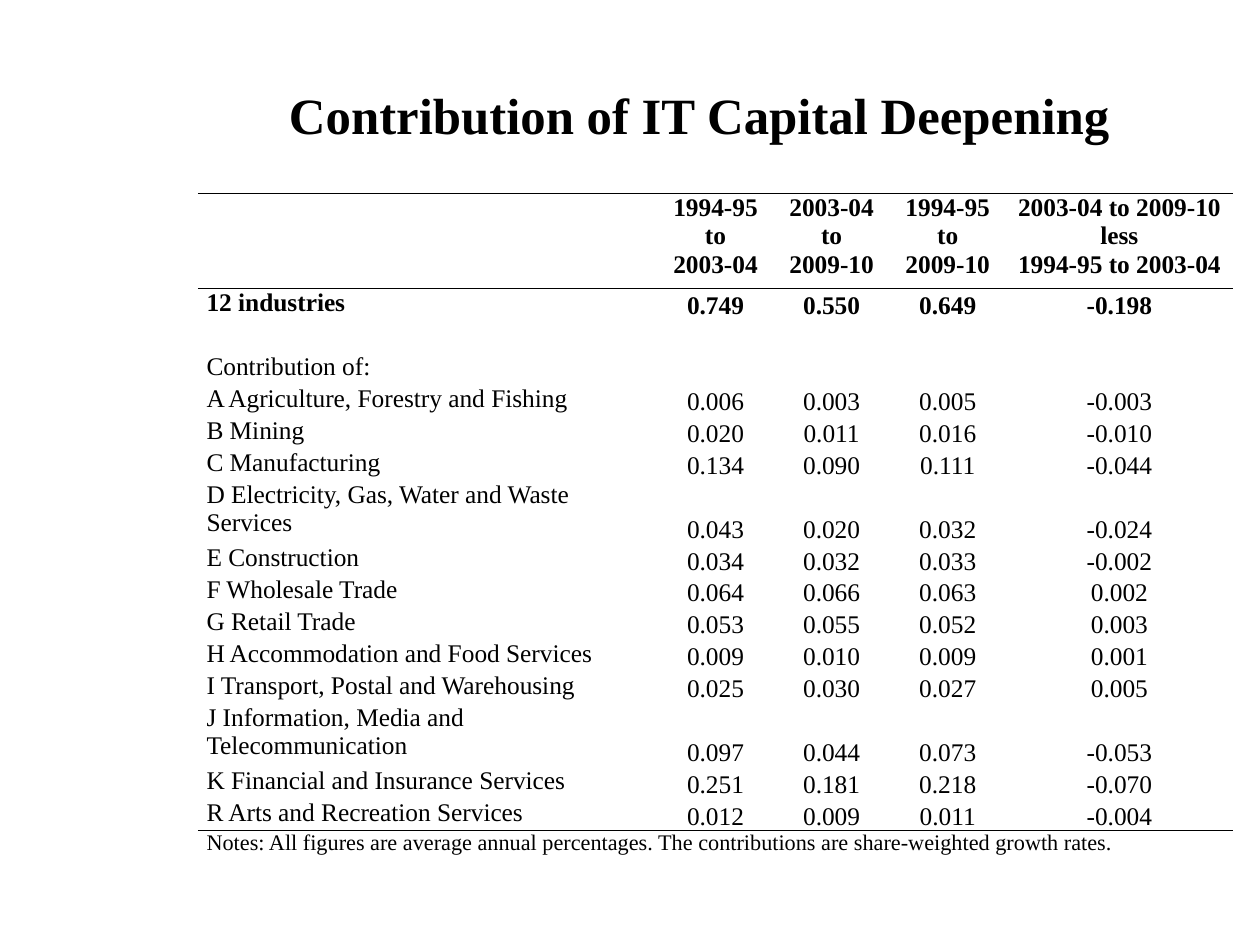
from dataclasses import dataclass

import lxml.etree
import pptx
import pptx.dml.color
import pptx.enum.text
import pptx.oxml.ns
import pptx.table
import pptx.util

Cm = pptx.util.Cm
Pt = pptx.util.Pt
qn = pptx.oxml.ns.qn
Align = pptx.enum.text.PP_ALIGN
Anchor = pptx.enum.text.MSO_ANCHOR

BLACK = pptx.dml.color.RGBColor(0, 0, 0)
FACE = "Times New Roman"
SIZE = 16
WIDTHS = (10.21, 2.58, 2.58, 2.58, 5.05)
HEAD, LINE, WRAP, NOTE = 2.11, 0.71, 1.41, 0.69  # row heights in cm
BOX = {
    "margin_left": Cm(0.19), "margin_right": Cm(0.19),
    "margin_top": Cm(0), "margin_bottom": Cm(0),
}


@dataclass
class Row:
    label: str = ""
    values: tuple[str, ...] = ("",) * 4
    height: float = LINE
    bold: bool = False
    size: int = SIZE
    rules: str = ""  # T and B: ruled top and bottom
    anchor: Anchor = Anchor.BOTTOM


ROWS = [
    Row("", ("1994-95\nto\n2003-04", "2003-04\nto\n2009-10", "1994-95\nto\n2009-10",
             "2003-04 to 2009-10\nless\n1994-95 to 2003-04"),
        HEAD, True, rules="TB", anchor=Anchor.TOP),
    Row("12 industries", ("0.749", "0.550", "0.649", "-0.198"), bold=True, rules="T"),
    Row(),
    Row("Contribution of:"),
    Row("A Agriculture, Forestry and Fishing", ("0.006", "0.003", "0.005", "-0.003")),
    Row("B Mining", ("0.020", "0.011", "0.016", "-0.010")),
    Row("C Manufacturing", ("0.134", "0.090", "0.111", "-0.044")),
    Row("D Electricity, Gas, Water and Waste Services",
        ("0.043", "0.020", "0.032", "-0.024"), WRAP),
    Row("E Construction", ("0.034", "0.032", "0.033", "-0.002")),
    Row("F Wholesale Trade", ("0.064", "0.066", "0.063", "0.002")),
    Row("G Retail Trade", ("0.053", "0.055", "0.052", "0.003")),
    Row("H Accommodation and Food Services", ("0.009", "0.010", "0.009", "0.001")),
    Row("I Transport, Postal and Warehousing", ("0.025", "0.030", "0.027", "0.005")),
    Row("J Information, Media and Telecommunication",
        ("0.097", "0.044", "0.073", "-0.053"), WRAP),
    Row("K Financial and Insurance Services", ("0.251", "0.181", "0.218", "-0.070")),
    Row("R Arts and Recreation Services", ("0.012", "0.009", "0.011", "-0.004"), rules="B"),
    Row("Notes: All figures are average annual percentages. "
        "The contributions are share-weighted growth rates.",
        height=NOTE, size=14, rules="T"),
]


def apply(item: object, style: dict[str, object]) -> None:
    for name, value in style.items():
        setattr(item, name, value)


def write(frame: object, text: str, size: int, bold: bool, align: Align,
          space: float) -> None:
    frame.text = text
    for para in frame.paragraphs:
        apply(para, {"alignment": align, "line_spacing": space})
        for run in para.runs:
            apply(run.font, {"name": FACE, "size": Pt(size), "bold": bold})
            run.font.color.rgb = BLACK
        if not para.runs:
            lxml.etree.SubElement(para._p, qn("a:endParaRPr"), sz=str(size * 100))


def border(cell: pptx.table._Cell, rules: str) -> None:
    props = cell._tc.get_or_add_tcPr()
    for side in "LRTB":
        line = lxml.etree.SubElement(props, qn(f"a:ln{side}"), w=str(Pt(1)))
        if side in rules:
            fill = lxml.etree.SubElement(line, qn("a:solidFill"))
            lxml.etree.SubElement(fill, qn("a:srgbClr"), val=str(BLACK))
        else:
            lxml.etree.SubElement(line, qn("a:noFill"))


def fill_row(table: pptx.table.Table, index: int, row: Row) -> None:
    table.rows[index].height = Cm(row.height)
    for col, text in enumerate((row.label, *row.values)):
        cell = table.cell(index, col)
        align = Align.CENTER if col else Align.LEFT
        write(cell.text_frame, text, row.size, row.bold, align, 1.01)
        anchor = row.anchor if col else Anchor.TOP
        apply(cell, {**BOX, "vertical_anchor": anchor})
        border(cell, row.rules)
        cell.fill.background()


def main() -> None:
    deck = pptx.Presentation()
    apply(deck, {"slide_width": Cm(28), "slide_height": Cm(21)})
    slide = deck.slides.add_slide(deck.slide_layouts[6])

    # Title
    title = slide.shapes.add_textbox(Cm(4.5), Cm(0.84), Cm(22.1), Cm(3.5)).text_frame
    apply(title, {**dict.fromkeys(BOX, Cm(0)), "word_wrap": True,
                  "vertical_anchor": Anchor.MIDDLE})
    write(title, "Contribution of IT Capital Deepening", 32, True, Align.CENTER, 0.99)

    # Table of contributions by industry
    table = slide.shapes.add_table(
        len(ROWS), len(WIDTHS), Cm(4.4), Cm(4.3), Cm(sum(WIDTHS)),
        Cm(sum(row.height for row in ROWS))).table
    apply(table, {"first_row": False, "horz_banding": False})
    for column, width in zip(table.columns, WIDTHS):
        column.width = Cm(width)
    for index, row in enumerate(ROWS):
        fill_row(table, index, row)

    # Notes span the full width
    last = len(ROWS) - 1
    table.cell(last, 0).merge(table.cell(last, len(WIDTHS) - 1))

    deck.save("out.pptx")


if __name__ == "__main__":
    main()
